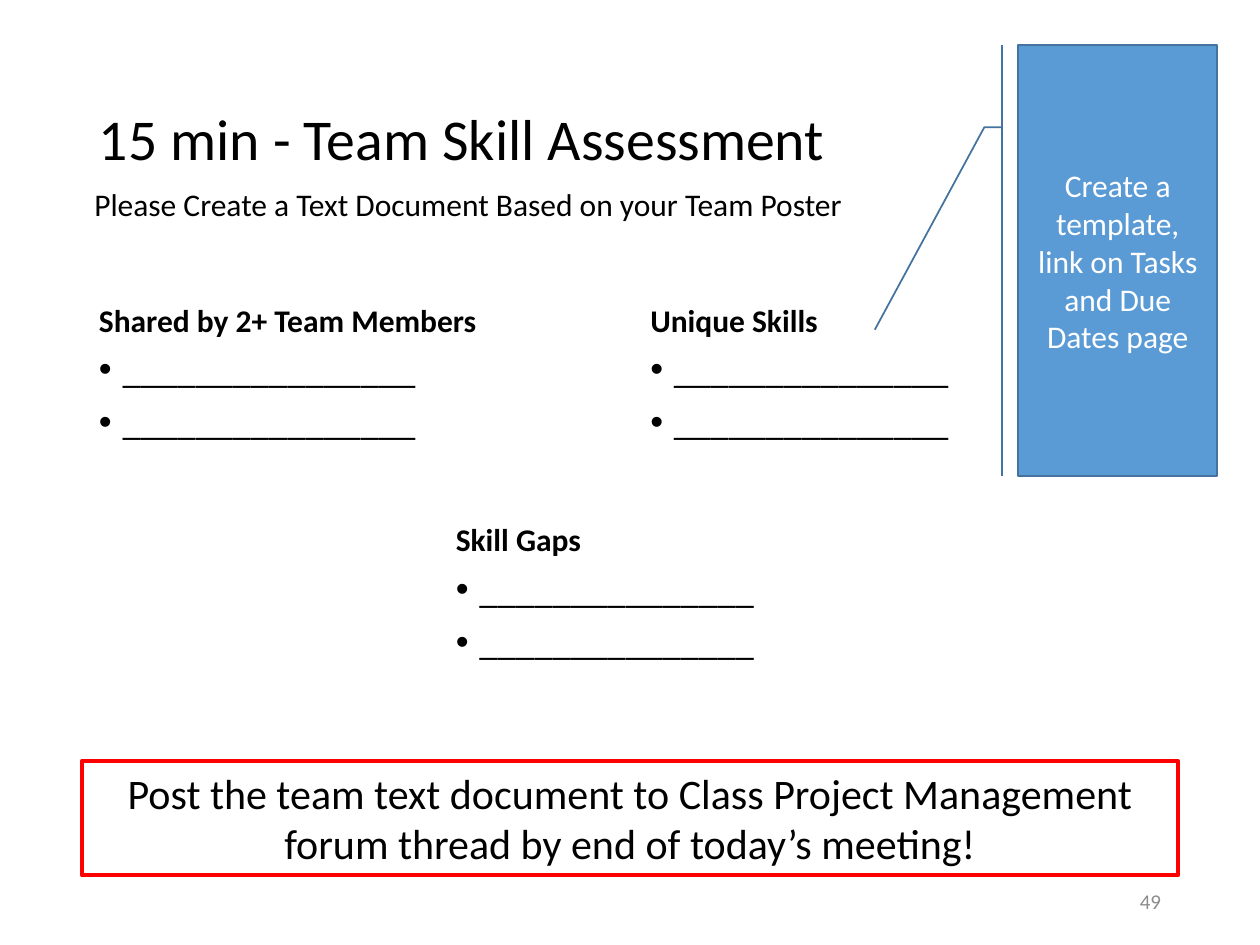
from lxml import etree
from pptx import Presentation
from pptx.dml.color import RGBColor
from pptx.enum.shapes import MSO_SHAPE
from pptx.enum.text import MSO_ANCHOR as Anchor, PP_ALIGN as Align
from pptx.oxml.ns import qn
from pptx.util import Pt

FONT = "Calibri"
BLACK, WHITE, GRAY, RED = "000000", "FFFFFF", "8C8C8C", "FF0000"
BLUE, DARK_BLUE = "5B9BD5", "43739E"
INDENT = 13.5

# Boxes are (left, top, width, height) in points
TITLE = ("15 min - Team Skill Assessment", (49.5, 28.75, 621, 104.4))
SUBTITLE = ("Please Create a Text Document Based on your Team Poster",
            (46.8, 102.2, 475.2, 29))
SKILL_COLUMNS = [
    ("Shared by 2+ Team Members", ["_" * 16] * 2, 49.5, 304.6),
    ("Unique Skills", ["_" * 15] * 2, 364.5, 306),
]
HEADING_TOP, HEADING_HEIGHT, LIST_HEIGHT = 132.4, 64.9, 290.2
GAPS = ("Skill Gaps", ["_" * 15] * 2, (253.4, 293.8, 187.2, 90.7))
REMINDER = ("Post the team text document to Class Project Management "
            "forum thread by end of today’s meeting!", (46.8, 434.9, 626.4, 65.4))
CALLOUT = ("Create a template, link on Tasks and Due Dates page",
           (581.8, 25.9, 113.8, 246.2))
CALLOUT_ADJUSTMENTS = [0.19, -0.08, 0.19, -0.17, 0.66, -0.72]
PAGE_NUMBER = ("49", (508.5, 500.5, 162, 28.75))


def rgb(color):
    return RGBColor.from_string(color)


def write(paragraph, text, size, color=BLACK, bold=False, align=Align.LEFT):
    paragraph.text = text
    paragraph.alignment = align
    font = paragraph.font
    font.name, font.size, font.bold = FONT, Pt(size), bold
    font.color.rgb = rgb(color)


def add_text_box(slide, box, anchor=Anchor.TOP, wrap=True):
    frame = slide.shapes.add_textbox(*map(Pt, box)).text_frame
    frame.word_wrap = wrap
    frame.vertical_anchor = anchor
    return frame


def set_body_spacing(paragraph):
    paragraph.line_spacing = 0.9
    paragraph.space_before = Pt(7.5)


def write_bullet(paragraph, text):
    write(paragraph, text, 21)
    set_body_spacing(paragraph)
    properties = paragraph._p.get_or_add_pPr()
    properties.set("marL", str(Pt(INDENT)))
    properties.set("indent", str(-Pt(INDENT)))
    etree.SubElement(properties, qn("a:buFont")).set("typeface", "Arial")
    etree.SubElement(properties, qn("a:buChar")).set("char", "•")
    # The schema wants bullets ahead of the default run properties
    properties.append(properties.find(qn("a:defRPr")))


def add_panel(slide, kind, box, text, size, color, line, line_width, fill=None):
    shape = slide.shapes.add_shape(kind, *map(Pt, box))
    shape.shadow.inherit = False
    if fill:
        shape.fill.solid()
        shape.fill.fore_color.rgb = rgb(fill)
    else:
        shape.fill.background()
    shape.line.color.rgb = rgb(line)
    shape.line.width = Pt(line_width)
    frame = shape.text_frame
    frame.word_wrap = True
    frame.vertical_anchor = Anchor.MIDDLE if fill else Anchor.TOP
    write(frame.paragraphs[0], text, size, color, align=Align.CENTER)
    return shape


def main():
    presentation = Presentation()
    presentation.slide_width, presentation.slide_height = Pt(720), Pt(540)
    slide = presentation.slides.add_slide(presentation.slide_layouts[6])

    text, box = TITLE
    title = add_text_box(slide, box, Anchor.MIDDLE).paragraphs[0]
    write(title, text, 33)
    title.line_spacing = 0.9

    for heading, items, left, width in SKILL_COLUMNS:
        frame = add_text_box(slide, (left, HEADING_TOP, width, HEADING_HEIGHT),
                             Anchor.BOTTOM)
        write(frame.paragraphs[0], heading, 18, bold=True)
        set_body_spacing(frame.paragraphs[0])
        frame = add_text_box(
            slide, (left, HEADING_TOP + HEADING_HEIGHT, width, LIST_HEIGHT))
        for index, item in enumerate(items):
            write_bullet(frame.add_paragraph() if index else frame.paragraphs[0], item)

    text, box = PAGE_NUMBER
    frame = add_text_box(slide, box, Anchor.MIDDLE)
    write(frame.paragraphs[0], text, 12, GRAY, align=Align.RIGHT)

    heading, items, box = GAPS
    frame = add_text_box(slide, box, wrap=False)
    write(frame.paragraphs[0], heading, 18, bold=True)
    for item in items:
        write_bullet(frame.add_paragraph(), item)

    text, box = SUBTITLE
    write(add_text_box(slide, box, wrap=False).paragraphs[0], text, 18)

    text, box = REMINDER
    add_panel(slide, MSO_SHAPE.RECTANGLE, box, text, 24, BLACK, RED, 2.25)

    text, box = CALLOUT
    callout = add_panel(slide, MSO_SHAPE.LINE_CALLOUT_2_BORDER_AND_ACCENT_BAR, box,
                        text, 18, WHITE, DARK_BLUE, 1, BLUE)
    for index, value in enumerate(CALLOUT_ADJUSTMENTS):
        callout.adjustments[index] = value

    presentation.save("out.pptx")


if __name__ == "__main__":
    main()
